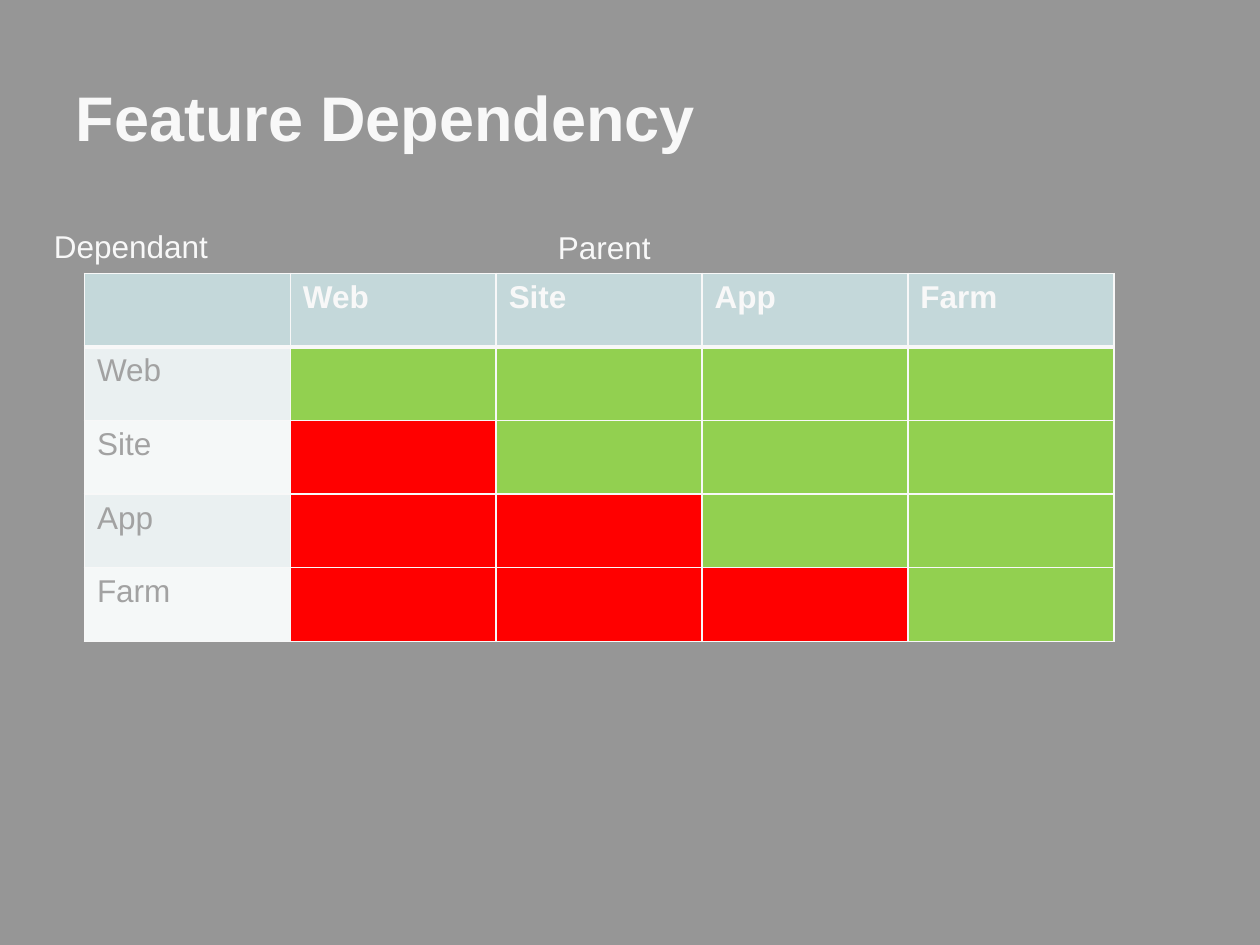
from lxml import etree
from pptx import Presentation
from pptx.dml.color import RGBColor
from pptx.enum.text import MSO_ANCHOR, MSO_AUTO_SIZE, PP_ALIGN
from pptx.oxml.ns import qn
from pptx.util import Inches, Pt

LEFT = PP_ALIGN.LEFT
MIDDLE = MSO_ANCHOR.MIDDLE
NO_AUTOFIT = MSO_AUTO_SIZE.NONE
GROW = MSO_AUTO_SIZE.SHAPE_TO_FIT_TEXT

BACKGROUND = RGBColor(0x96, 0x96, 0x96)
OFF_WHITE = RGBColor(0xF8, 0xF8, 0xF8)
ROW_LABEL = RGBColor(0xA2, 0xA2, 0xA2)
HEADER_FILL = RGBColor(0xC4, 0xD8, 0xDA)
BANDS = (RGBColor(0xEA, 0xF0, 0xF1), RGBColor(0xF5, 0xF8, 0xF8))
ALLOWED = RGBColor(0x92, 0xD0, 0x50)
FORBIDDEN = RGBColor(0xFF, 0x00, 0x00)

SCOPES = ("Web", "Site", "App", "Farm")
TITLE_ONLY = 5


class DependencySlide:
    font_name = "Arial"
    body_size = Pt(18)
    title_size = Pt(36)
    thin, thick = Pt(1), Pt(3)

    def __init__(self, presentation):
        layout = presentation.slide_layouts[TITLE_ONLY]
        self.slide = presentation.slides.add_slide(layout)
        background = self.slide.background.fill
        background.solid()
        background.fore_color.rgb = BACKGROUND

    def add_text(self, frame, text, color=OFF_WHITE, **overrides):
        paragraph = frame.paragraphs[0]
        paragraph.alignment = LEFT
        run = paragraph.add_run()
        run.text = text
        font_format = {"name": self.font_name, "size": self.body_size,
                       "bold": False, **overrides}
        for attribute, value in font_format.items():
            setattr(run.font, attribute, value)
        run.font.color.rgb = color

    def title(self, text, left, top, width, height):
        heading = self.slide.shapes.title
        place = {"left": left, "top": top, "width": width, "height": height}
        for attribute, value in place.items():
            setattr(heading, attribute, Inches(value))
        frame = heading.text_frame
        frame.auto_size = NO_AUTOFIT
        frame.vertical_anchor = MIDDLE
        self.add_text(frame, text, size=self.title_size, bold=True)

    def label(self, text, left, top, width, height, wrap=True):
        box = self.slide.shapes.add_textbox(
            Inches(left), Inches(top), Inches(width), Inches(height))
        box.text_frame.word_wrap = wrap
        box.text_frame.auto_size = GROW
        self.add_text(box.text_frame, text)

    def borders(self, cell, top, bottom):
        """Add the four edge lines, which must precede the cell fill."""
        properties = cell._tc.get_or_add_tcPr()
        widths = {"a:lnL": self.thin, "a:lnR": self.thin,
                  "a:lnT": top, "a:lnB": bottom}
        for position, (edge, width) in enumerate(widths.items()):
            line = etree.Element(qn(edge), w=str(width))
            fill = etree.SubElement(line, qn("a:solidFill"))
            etree.SubElement(fill, qn("a:srgbClr"), val=str(OFF_WHITE))
            properties.insert(position, line)

    def matrix(self, scopes, left, top, width, height):
        """Draw the grid; a scope may depend on itself and later scopes."""
        count = len(scopes) + 1
        table = self.slide.shapes.add_table(
            count, count, Inches(left), Inches(top),
            Inches(width), Inches(height)).table
        for row in range(count):
            for column in range(count):
                cell = table.cell(row, column)
                if row == 0:
                    color = HEADER_FILL
                elif column == 0:
                    color = BANDS[(row - 1) % len(BANDS)]
                else:
                    color = ALLOWED if column >= row else FORBIDDEN
                cell.fill.solid()
                cell.fill.fore_color.rgb = color
                self.borders(cell,
                             top=self.thick if row == 1 else self.thin,
                             bottom=self.thick if row == 0 else self.thin)
        for index, scope in enumerate(scopes, start=1):
            self.add_text(table.cell(0, index).text_frame, scope, bold=True)
            self.add_text(table.cell(index, 0).text_frame, scope, ROW_LABEL)


def main():
    presentation = Presentation()
    presentation.slide_width = Inches(10)
    presentation.slide_height = Inches(7.5)
    slide = DependencySlide(presentation)
    slide.title("Feature Dependency", 0.5, 0.3, 9, 1.25)
    slide.matrix(SCOPES, 0.67, 2.17, 8.17, 2.92)
    slide.label("Parent", 4.33, 1.76, 2.08, 0.4)
    slide.label("Dependant", 0.33, 1.75, 1.44, 0.4, wrap=False)
    presentation.save("out.pptx")


if __name__ == "__main__":
    main()
